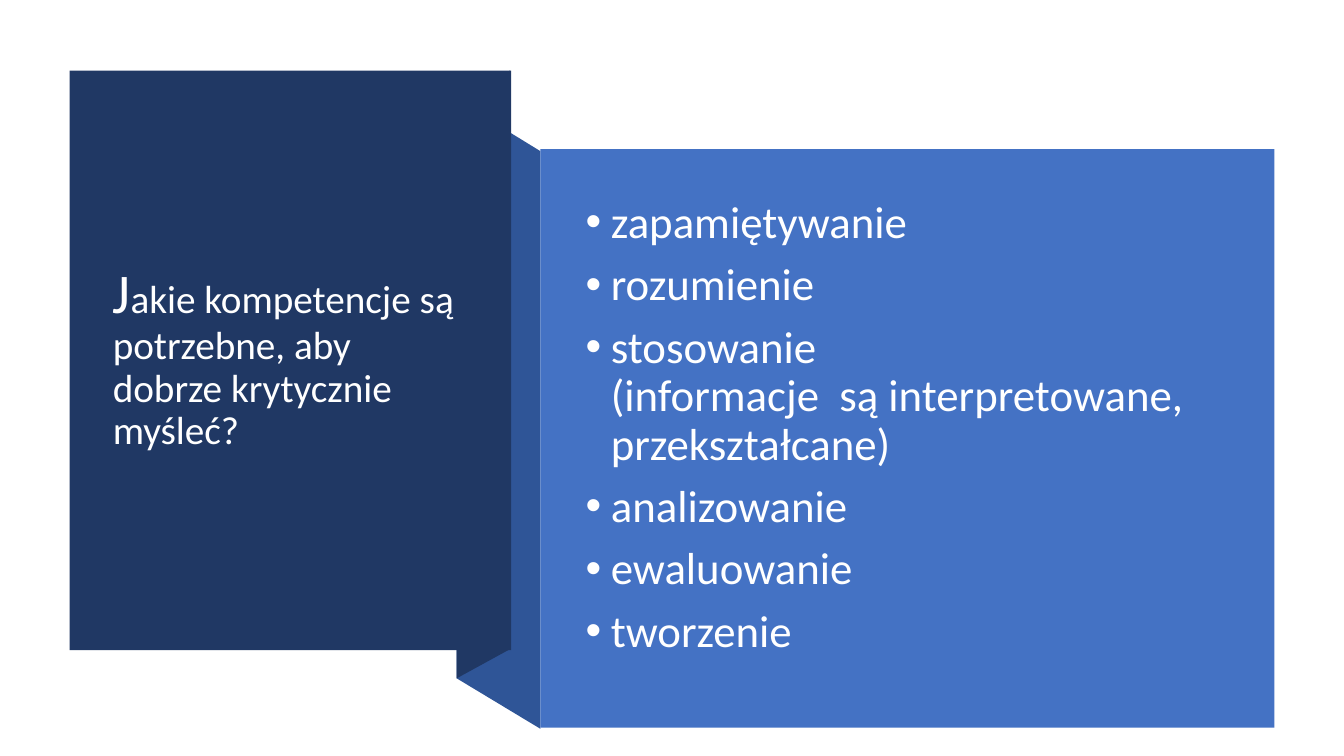
"""Build a slide with a folded ribbon panel: a question and a list of skills."""
from dataclasses import dataclass

from lxml.etree import SubElement
from pptx import Presentation
from pptx.dml.color import RGBColor
from pptx.enum.shapes import MSO_SHAPE
from pptx.enum.text import MSO_ANCHOR
from pptx.oxml.ns import qn
from pptx.util import Inches, Pt

HARD_SPACE = chr(160)
QUESTION = ("J", "akie kompetencje są potrzebne, aby dobrze krytycznie myśleć?")
SKILLS = [
    f"zapamiętywanie{HARD_SPACE}",
    f"rozumienie{HARD_SPACE}",
    f"stosowanie (informacje{HARD_SPACE * 2}są{HARD_SPACE}interpretowane, przekształcane)",
    "analizowanie",
    "ewaluowanie",
    f"tworzenie{HARD_SPACE}",
]


@dataclass(frozen=True)
class Theme:
    font: str = "Calibri"
    text: RGBColor = RGBColor(0xFF, 0xFF, 0xFF)
    navy: RGBColor = RGBColor(0x20, 0x38, 0x64)
    fold: RGBColor = RGBColor(0x2F, 0x55, 0x97)
    blue: RGBColor = RGBColor(0x44, 0x72, 0xC4)
    initial_size: Pt = Pt(40)
    question_size: Pt = Pt(28)
    skill_size: Pt = Pt(32)


THEME = Theme()
WIDTH, HEIGHT = 13.33, 7.5
QUESTION_PANEL = (0.69, 0.7, 4.38, 5.75)
SKILLS_PANEL = (5.36, 1.48, 7.28, 5.74)
QUESTION_TEXT = (1.02, 1.07, 3.71, 4.99)
SKILLS_TEXT = (5.71, 1.88, 6.51, 4.74)
FOLD_LEFT, FOLD_TOP, FOLD_BOTTOM = 4.53, 0.99, 6.73
INDENT = Inches(0.25)


def paint(shape, color):
    shape.shadow.inherit = False
    shape.fill.solid()
    shape.fill.fore_color.rgb = color
    shape.line.fill.background()


def add_panel(slide, box, color):
    paint(slide.shapes.add_shape(MSO_SHAPE.RECTANGLE, *map(Inches, box)), color)


def add_fold(slide, edge, top, bottom, color):
    builder = slide.shapes.build_freeform(Inches(edge), Inches(bottom))
    corners = [(FOLD_LEFT, FOLD_BOTTOM), (FOLD_LEFT, FOLD_TOP), (edge, top)]
    builder.add_line_segments([(Inches(x), Inches(y)) for x, y in corners])
    paint(builder.convert_to_shape(), color)


def add_text_frame(slide, box):
    frame = slide.shapes.add_textbox(*map(Inches, box)).text_frame
    frame.word_wrap = True
    frame.vertical_anchor = MSO_ANCHOR.MIDDLE
    return frame


def style(paragraph, size):
    paragraph.line_spacing = 0.9
    paragraph.font.name = THEME.font
    paragraph.font.size = size
    paragraph.font.color.rgb = THEME.text


def add_bullet(paragraph):
    properties = paragraph._p.get_or_add_pPr()
    properties.set("marL", str(INDENT))
    properties.set("indent", str(-INDENT))
    bullet_font = SubElement(properties, qn("a:buFont"))
    bullet_font.set("typeface", "Arial")
    SubElement(properties, qn("a:buChar")).set("char", "•")


def add_question(slide):
    paragraph = add_text_frame(slide, QUESTION_TEXT).paragraphs[0]
    style(paragraph, THEME.question_size)
    for text in QUESTION:
        paragraph.add_run().text = text
    paragraph.runs[0].font.size = THEME.initial_size


def add_skills(slide):
    frame = add_text_frame(slide, SKILLS_TEXT)
    for index, skill in enumerate(SKILLS):
        paragraph = frame.add_paragraph() if index else frame.paragraphs[0]
        paragraph.space_before = Pt(10)
        add_bullet(paragraph)
        style(paragraph, THEME.skill_size)
        paragraph.add_run().text = skill


def main():
    presentation = Presentation()
    presentation.slide_width = Inches(WIDTH)
    presentation.slide_height = Inches(HEIGHT)
    slide = presentation.slides.add_slide(presentation.slide_layouts[6])

    add_fold(slide, 5.36, 1.5, 7.23, THEME.fold)
    add_fold(slide, 5.06, 0.7, 6.44, THEME.navy)
    add_panel(slide, QUESTION_PANEL, THEME.navy)
    add_question(slide)
    add_panel(slide, SKILLS_PANEL, THEME.blue)
    add_skills(slide)

    presentation.save("out.pptx")


if __name__ == "__main__":
    main()
